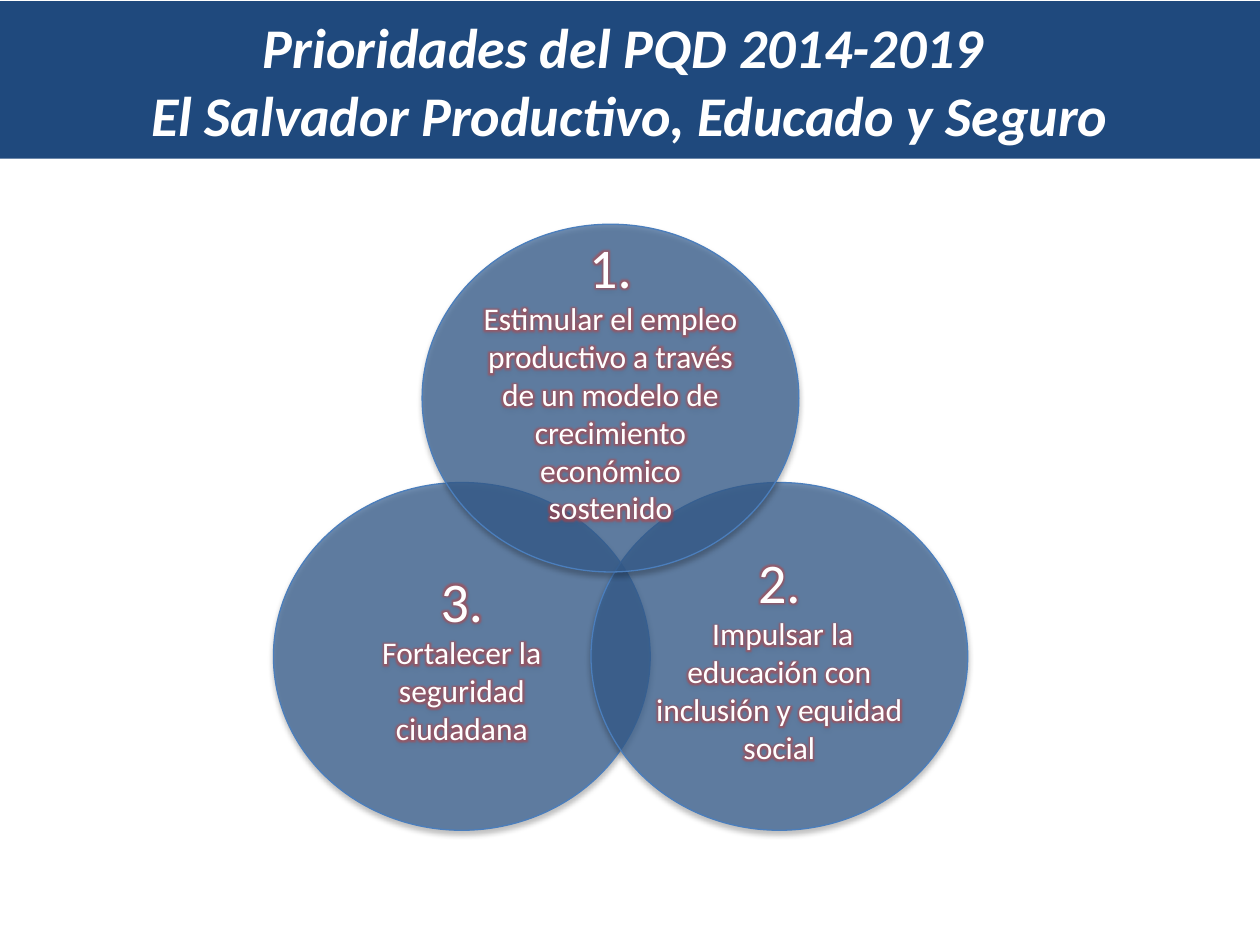
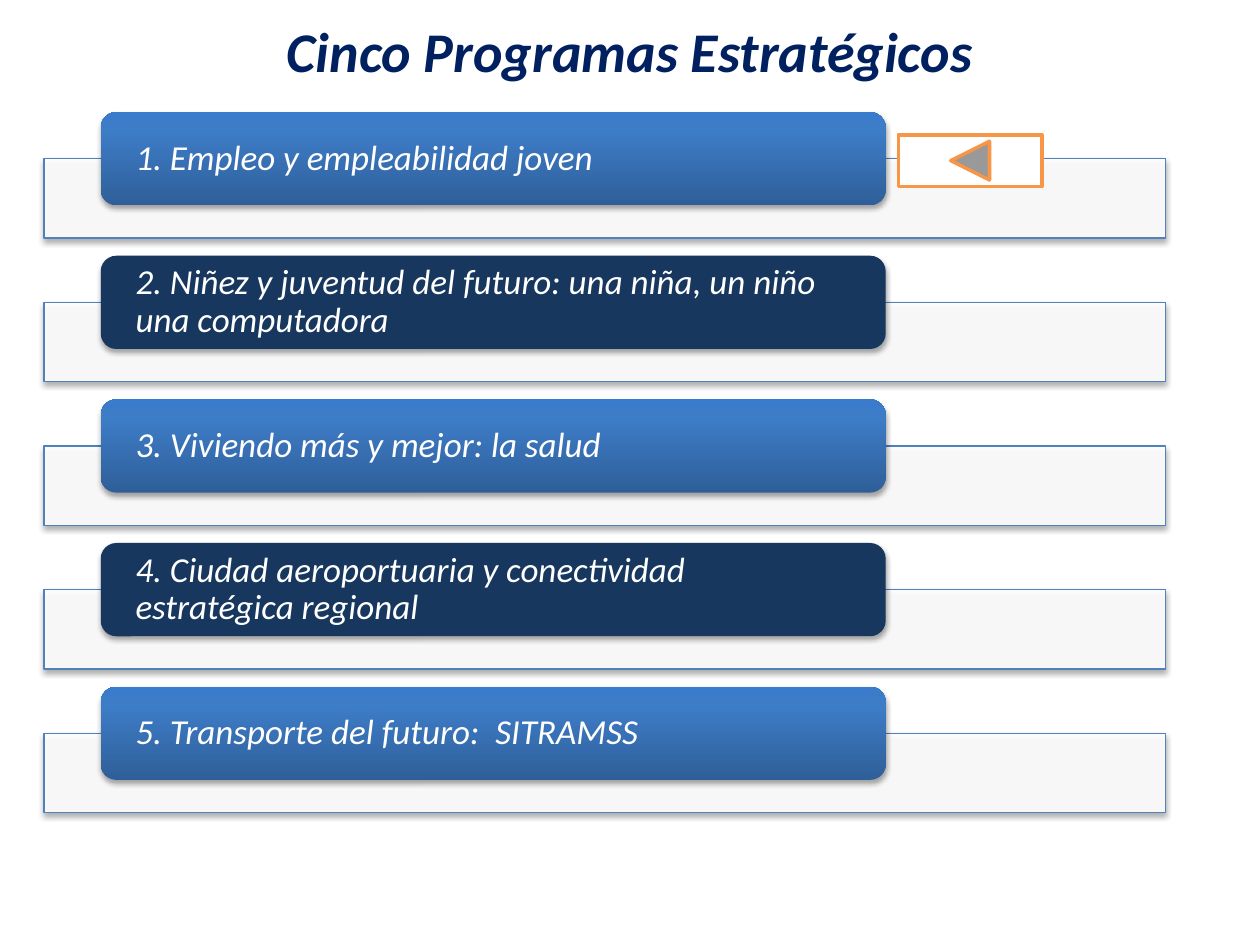
from copy import deepcopy

from lxml import etree
from pptx import Presentation
from pptx.dml.color import RGBColor
from pptx.enum.shapes import MSO_SHAPE
from pptx.enum.text import MSO_ANCHOR, PP_ALIGN
from pptx.oxml.ns import qn
from pptx.util import Inches, Pt

RECTANGLE, ROUNDED = MSO_SHAPE.RECTANGLE, MSO_SHAPE.ROUNDED_RECTANGLE
ELLIPSE = MSO_SHAPE.OVAL
BACK_BUTTON = MSO_SHAPE.ACTION_BUTTON_BACK_OR_PREVIOUS
CENTER, LEFT, MIDDLE = PP_ALIGN.CENTER, PP_ALIGN.LEFT, MSO_ANCHOR.MIDDLE

COLORS = {
    "white": "FFFFFF", "black": "000000", "band": "1F497D", "navy": "002060",
    "circle": "376092", "circle_line": "4B7EBC", "glow": "C83A37",
    "bar_line": "4F81BD", "dark_card": "17375E", "orange": "F79646",
}
CARD_GRADIENT = [(0, "2F5F99"), (0.8, "3D7CC7"), (1, "3A7CCB")]

TITLE_FORMAT = {"name": "Calibri", "size": Pt(32), "bold": True, "italic": True}
NUMBER_FORMAT = {"name": "Calibri", "size": Pt(32)}
PRIORITY_FORMAT = {"name": "Calibri", "size": Pt(18)}
CARD_FORMAT = {"name": "Calibri", "size": Pt(20), "italic": True}

PRIORITIES_TITLE = "Prioridades del PQD 2014-2019 \vEl Salvador Productivo, Educado y Seguro"
PROGRAMS_TITLE = "Cinco Programas Estratégicos"

PRIORITIES = [
    ("3.", "Fortalecer la seguridad ciudadana", 2.17, 3.83, 0.05),
    ("2.", " Impulsar la educación con inclusión y equidad social", 4.69, 3.83, 0.05),
    ("1.", "Estimular el empleo productivo a través de un modelo de crecimiento "
           "económico sostenido", 3.35, 1.78, 0.35),
]
PROGRAMS = [
    "1. Empleo y empleabilidad joven",
    "2. Niñez y juventud del futuro: una niña, un niño una computadora",
    "3. Viviendo más y mejor: la salud",
    "4. Ciudad aeroportuaria y conectividad estratégica regional",
    "5. Transporte del futuro:  SITRAMSS",
]

CIRCLE_WIDTH, CIRCLE_HEIGHT = 2.99, 2.76
FIRST_CARD_TOP, PROGRAM_PITCH, BAR_OFFSET = 0.89, 1.14, 0.37


def color(name):
    return RGBColor.from_string(COLORS[name])


def add_color(parent, name, alpha):
    element = etree.SubElement(parent, qn("a:srgbClr"), val=COLORS[name])
    etree.SubElement(element, qn("a:alpha"), val=str(alpha * 1000))


def add_shape(slide, kind, box, fill=None, line=None, line_width=0.75, alpha=None, shadow=False):
    shape = slide.shapes.add_shape(kind, *map(Inches, box))
    shape.shadow.inherit = False
    if fill:
        shape.fill.solid()
        shape.fill.fore_color.rgb = color(fill)
    else:
        shape.fill.background()
    if line:
        shape.line.color.rgb = color(line)
        shape.line.width = Pt(line_width)
    else:
        shape.line.fill.background()
    properties = shape._element.spPr
    if alpha:
        fill_color = properties.find(qn("a:solidFill"))[0]
        etree.SubElement(fill_color, qn("a:alpha"), val=str(alpha * 1000))
    if shadow:
        outer = etree.SubElement(
            properties.find(qn("a:effectLst")), qn("a:outerShdw"),
            blurRad=str(Pt(3.1)), dist=str(Pt(1.8)), dir="5400000", rotWithShape="0")
        add_color(outer, "black", 35)
    return shape


def write_text(shape, lines, align, font_color="white", margins=(0.1, 0.05, 0.1, 0.05),
               line_spacing=None):
    frame = shape.text_frame
    frame.word_wrap = True
    frame.vertical_anchor = MIDDLE
    for side, margin in zip(("left", "top", "right", "bottom"), margins):
        setattr(frame, f"margin_{side}", Inches(margin))
    for index, (text, font_format) in enumerate(lines):
        paragraph = frame.add_paragraph() if index else frame.paragraphs[0]
        paragraph.text = text
        paragraph.alignment = align
        paragraph.line_spacing = line_spacing
        for run in paragraph.runs:
            for attribute, value in font_format.items():
                setattr(run.font, attribute, value)
            run.font.color.rgb = color(font_color)


def add_glow(shape):
    for paragraph in shape.text_frame.paragraphs:
        for run in paragraph.runs:
            effects = etree.Element(qn("a:effectLst"))
            glow = etree.SubElement(effects, qn("a:glow"), rad=str(Pt(5)))
            add_color(glow, "glow", 50)
            run.font._element.find(qn("a:solidFill")).addnext(effects)


def fill_gradient(shape):
    shape.fill.gradient()
    shape.fill.gradient_angle = 90
    stop_list = shape._element.spPr.find(qn("a:gradFill")).find(qn("a:gsLst"))
    stop_list.append(deepcopy(stop_list[-1]))
    for stop, (position, value) in zip(shape.fill.gradient_stops, CARD_GRADIENT):
        stop.position = position
        stop.color.rgb = RGBColor.from_string(value)


def add_title(slide, text, top, height, font_color, fill=None):
    title = add_shape(slide, RECTANGLE, (0, top, 10, height), fill)
    write_text(title, [(text, TITLE_FORMAT)], CENTER, font_color)


def build_priorities(slide):
    for number, text, left, top, bottom_margin in PRIORITIES:
        circle = add_shape(slide, ELLIPSE, (left, top, CIRCLE_WIDTH, CIRCLE_HEIGHT),
                           "circle", "circle_line", alpha=71, shadow=True)
        write_text(circle, [(number, NUMBER_FORMAT), (text, PRIORITY_FORMAT)], CENTER,
                   margins=(0.04, 0.05, 0.04, bottom_margin))
        add_glow(circle)
    add_title(slide, PRIORITIES_TITLE, 0.01, 1.25, "white", "band")


def build_programs(slide):
    add_title(slide, PROGRAMS_TITLE, 0.05, 0.69, "navy")
    for index, program in enumerate(PROGRAMS):
        top = FIRST_CARD_TOP + index * PROGRAM_PITCH
        add_shape(slide, RECTANGLE, (0.35, top + BAR_OFFSET, 8.9, 0.63),
                  "white", "bar_line", alpha=90, shadow=True)
        card = add_shape(slide, ROUNDED, (0.8, top, 6.23, 0.74), "dark_card", shadow=True)
        if index % 2 == 0:
            fill_gradient(card)
        write_text(card, [(program, CARD_FORMAT)], LEFT,
                   margins=(0.24, 0, 0.24, 0), line_spacing=0.9)
    add_shape(slide, BACK_BUTTON, (7.13, 1.07, 1.14, 0.41), "white", "orange", line_width=2)


def main():
    presentation = Presentation()
    presentation.slide_width, presentation.slide_height = Inches(10), Inches(7.5)
    blank = presentation.slide_layouts[6]
    for build in (build_priorities, build_programs):
        build(presentation.slides.add_slide(blank))
    presentation.save("out.pptx")


if __name__ == "__main__":
    main()
